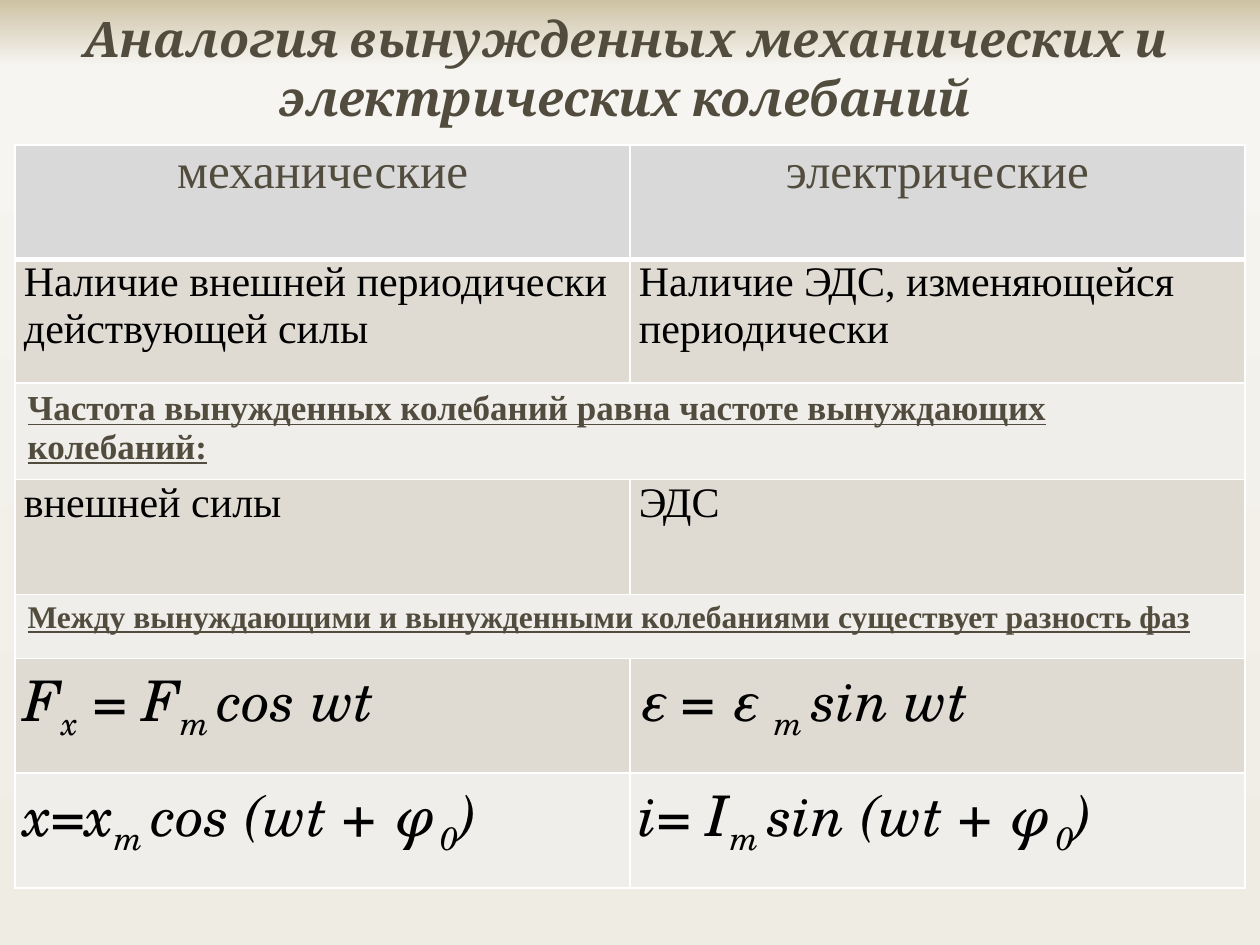
from copy import deepcopy

from lxml import etree
from pptx import Presentation
from pptx.dml.color import RGBColor
from pptx.enum.text import MSO_ANCHOR, PP_ALIGN
from pptx.oxml.ns import qn
from pptx.util import Inches, Pt

CENTER = PP_ALIGN.CENTER
LEFT = PP_ALIGN.LEFT
MIDDLE = MSO_ANCHOR.MIDDLE

COLORS = {
    "sand": "CEC2A4", "cream": "F6F5F1", "ivory": "EFECE4",
    "heading": "524C3E", "body": "000000", "border": "FFFFFF",
    "header_fill": "D9D9D9", "dark_fill": "DFDBD2", "light_fill": "F0EEEA",
}
SERIF = "Times New Roman"
FORMULA = "TeX Gyre Schola"
BACKGROUND_STOPS = [(0, "sand"), (0.07, "cream"), (1, "ivory")]

STYLES = {
    "title": dict(font="Cambria", size=28, color="heading", bold=True, italic=True),
    "header": dict(font=SERIF, size=28, color="heading"),
    "body": dict(font=SERIF, size=24, color="body"),
    "wide": dict(font=SERIF, size=20, color="heading", bold=True, underline=True),
    "wide_small": dict(font=SERIF, size=18, color="heading", bold=True, underline=True),
    "formula": dict(font=FORMULA, size=32, color="body", italic=True),
}

# Row height, fill, style, cells; the spans of a cell alternate normal and subscript.
ROWS = [
    (0.91, "header_fill", "header", [["механические"], ["электрические"]]),
    (0.98, "dark_fill", "body", [["Наличие внешней периодически действующей силы"],
                                 ["Наличие ЭДС, изменяющейся периодически"]]),
    (0.55, "light_fill", "wide",
     [["Частота вынужденных колебаний равна частоте вынуждающих колебаний:"]]),
    (0.91, "dark_fill", "body", [["внешней силы"], ["ЭДС"]]),
    (0.51, "light_fill", "wide_small",
     [["Между вынуждающими и вынужденными колебаниями существует разность фаз"]]),
    (0.91, "dark_fill", "formula", [["F", "x", " = F", "m ", "cos wt"],
                                    ["ε = ε ", "т ", "sin wt"]]),
    (0.91, "light_fill", "formula", [["x=x", "m ", "cos (wt + φ", " 0", ")"],
                                     ["i= I", "m ", "sin (wt + φ", " 0", ")"]]),
]


def rgb(name):
    return RGBColor.from_string(COLORS[name])


def paint_background(page):
    fill = page.background.fill
    fill.gradient()
    fill.gradient_angle = 270
    stop_list = page.element.find(".//" + qn("a:gsLst"))
    stop_list.append(deepcopy(stop_list[-1]))
    for stop, (position, color) in zip(fill.gradient_stops, BACKGROUND_STOPS):
        stop.position = position
        stop.color.rgb = rgb(color)


def add_spans(para, texts, style):
    """Add the texts as runs, every second one as a subscript."""
    for index, text in enumerate(texts):
        span = para.add_run()
        span.text = text
        font = span.font
        font.name = style["font"]
        font.size = Pt(style["size"])
        font.color.rgb = rgb(style["color"])
        font.bold = style.get("bold", False)
        font.italic = style.get("italic", False)
        font.underline = style.get("underline", False)
        if index % 2:
            font._element.set("baseline", "-25000")


def add_title(page, text):
    box = page.shapes.add_textbox(Inches(0.2), 0, Inches(9.53), Inches(1.07))
    frame = box.text_frame
    frame.word_wrap = True
    frame.vertical_anchor = MIDDLE
    para = frame.paragraphs[0]
    para.alignment = CENTER
    add_spans(para, [text], STYLES["title"])


def set_borders(cell, top, bottom):
    properties = cell._tc.get_or_add_tcPr()
    for side, width in (("L", 1), ("R", 1), ("T", top), ("B", bottom)):
        line = etree.SubElement(properties, qn("a:ln" + side), w=str(Pt(width)))
        fill = etree.SubElement(line, qn("a:solidFill"))
        etree.SubElement(fill, qn("a:srgbClr"), val=COLORS["border"])


def add_comparison_table(page):
    height = sum(row[0] for row in ROWS)
    table = page.shapes.add_table(len(ROWS), 2, Inches(0.12), Inches(1.15),
                                  Inches(9.76), Inches(height)).table
    for column in table.columns:
        column.width = Inches(4.88)
    for index, (row_height, fill, style, contents) in enumerate(ROWS):
        table.rows[index].height = Inches(row_height)
        cells = [table.cell(index, column) for column in range(2)]
        for cell in cells:
            set_borders(cell, top=3 if index == 1 else 1, bottom=3 if index == 0 else 1)
            cell.fill.solid()
            cell.fill.fore_color.rgb = rgb(fill)
        if len(contents) == 1:
            cells[0].merge(cells[1])
        for cell, texts in zip(cells, contents):
            if len(contents) == 2:
                cell.margin_left = cell.margin_right = Inches(0.07)
                cell.margin_top = cell.margin_bottom = 0
            para = cell.text_frame.paragraphs[0]
            para.alignment = CENTER if style == "header" else LEFT
            add_spans(para, texts, STYLES[style])


def main():
    deck = Presentation()
    deck.slide_width, deck.slide_height = Inches(10), Inches(7.5)
    page = deck.slides.add_slide(deck.slide_layouts[6])
    paint_background(page)
    add_title(page, "Аналогия вынужденных механических и электрических колебаний")
    add_comparison_table(page)
    deck.save("out.pptx")


if __name__ == "__main__":
    main()
